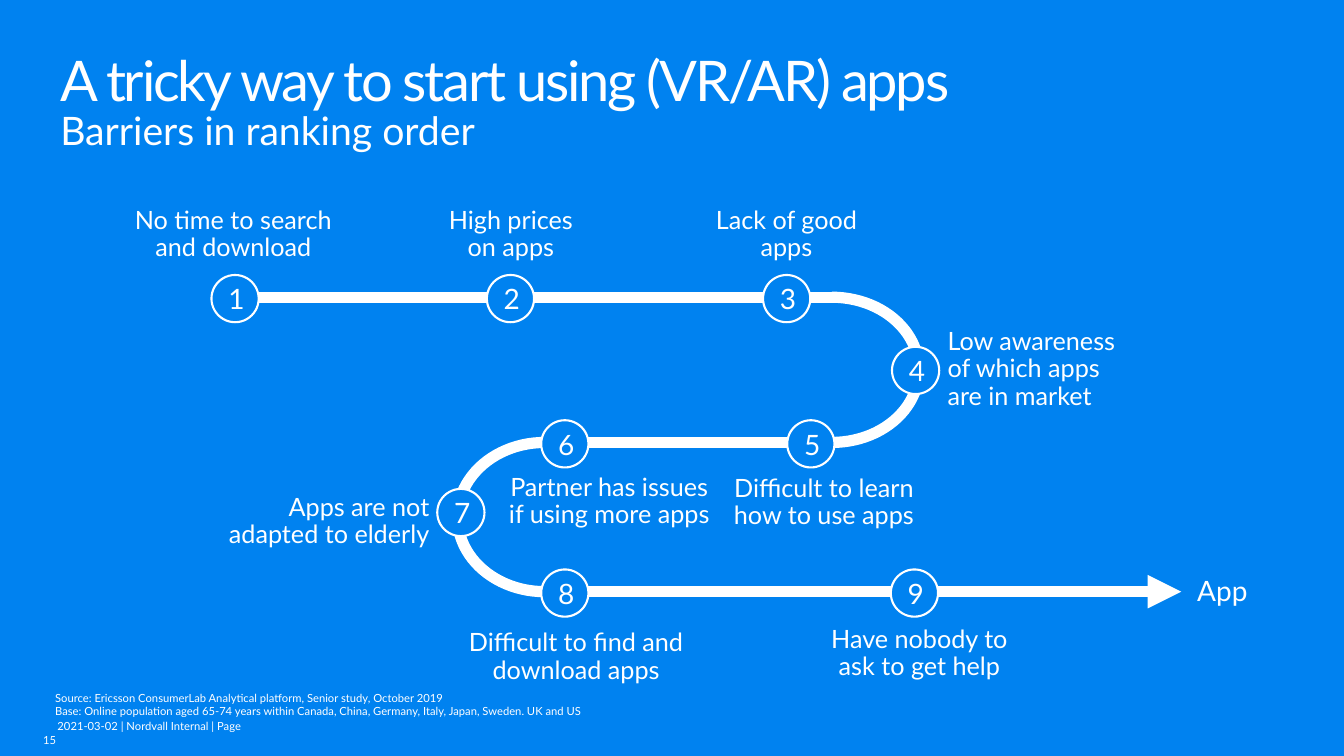
from lxml import etree
from pptx import Presentation
from pptx.dml.color import RGBColor
from pptx.enum.shapes import MSO_CONNECTOR, MSO_SHAPE
from pptx.enum.text import MSO_ANCHOR, PP_ALIGN
from pptx.oxml.ns import qn
from pptx.util import Cm, Pt

LEFT, MID, RIGHT = PP_ALIGN.LEFT, PP_ALIGN.CENTER, PP_ALIGN.RIGHT
TOP, CORE, LOW = MSO_ANCHOR.TOP, MSO_ANCHOR.MIDDLE, MSO_ANCHOR.BOTTOM
ARC, OVAL, LINE = MSO_SHAPE.ARC, MSO_SHAPE.OVAL, MSO_CONNECTOR.STRAIGHT

COLORS = {"blue": "0082F0", "white": "FFFFFF"}
FONT = "Lato"
ROAD = 8  # road width in points
DOT = 1.19  # stop diameter in cm

# Heights of the three road rows, within the route box
ROWS = (2.49, 6.15, 9.91)
# Row, start and end of each straight stretch
TRACKS = ((0, 2.94, 17.96), (1, 10.61, 17.85), (2, 10.79, 26.77))
# Upper row, left edge, start and end angle of each bend
BENDS = ((0, 15.77, 270, 90), (1, 8.53, 90, 270))
BEND_W = 4.39

# Stop position, label box, alignment, anchor, label
STOPS = (
    ((2.33, 1.93), (0.05, 0.08, 5.66, 1.57), MID, LOW, "No time to search and download"),
    ((9.27, 1.93), (7.97, 0.08, 3.81, 1.57), MID, LOW, "High prices on apps"),
    ((16.23, 1.93), (14.65, 0.08, 4.34, 1.57), MID, LOW, "Lack of good apps"),
    ((19.48, 3.74), (20.88, 3.53, 4.57, 1.57), LEFT, CORE,
     "Low awareness of which apps are in market"),
    ((16.84, 5.59), (15.44, 6.94, 4.65, 1.57), MID, TOP, "Difficult to learn how to use apps"),
    ((10.64, 5.59), (9.42, 6.91, 5.87, 1.57), MID, TOP, "Partner has issues\vif using more apps"),
    ((8.02, 7.32), (2.33, 7.42, 5.49, 1.19), RIGHT, TOP, "Apps are not adapted to elderly"),
    ((10.64, 9.35), (8.61, 10.75, 5.82, 1.63), MID, CORE, "Difficult to find and download apps"),
    ((19.45, 9.35), (17.4, 10.75, 5.54, 1.42), MID, TOP, "Have nobody to\vask to get help"),
)


def rgb(name):
    return RGBColor.from_string(COLORS[name])


def style(item, values):
    for key, value in values.items():
        setattr(item, key, value)


def ink(font, size):
    style(font, {"size": Pt(size), "name": FONT})
    font.color.rgb = rgb("white")


def stroke(line, width):
    line.color.rgb = rgb("white")
    line.width = Pt(width)


def write(slide, box, lines, size, pad=(0.2, 0.1), wrap=True, align=LEFT, anchor=TOP, lead=1.0):
    """Add a text box with one paragraph per line."""
    frame = slide.shapes.add_textbox(*map(Cm, box)).text_frame
    side, edge = map(Cm, pad)
    style(frame, {"word_wrap": wrap, "vertical_anchor": anchor, "margin_left": side,
                  "margin_right": side, "margin_top": edge, "margin_bottom": edge})
    frame.text = "\n".join(lines)
    for para in frame.paragraphs:
        style(para, {"alignment": align, "line_spacing": lead})
        for run in para.runs:
            ink(run.font, size)
    return frame


def heading(slide, box):
    frame = write(slide, box, ["A tricky way to start using (VR/AR) apps\vBarriers in ranking order"],
                  40, lead=0.85)
    main, sub = frame.paragraphs[0].runs
    main.font._element.set("spc", "-160")
    sub.font.size = Pt(28)


def track(slide, x1, x2, y, arrow):
    link = slide.shapes.add_connector(LINE, Cm(x1), Cm(y), Cm(x2), Cm(y))
    stroke(link.line, ROAD)
    if arrow:
        etree.SubElement(link.line._get_or_add_ln(), qn("a:tailEnd"), type="triangle")
    etree.SubElement(link._element.spPr, qn("a:effectLst"))


def bend(slide, x, y, height, start, end):
    curve = slide.shapes.add_shape(ARC, Cm(x), Cm(y), Cm(BEND_W), Cm(height))
    curve.shadow.inherit = False
    curve.fill.background()
    stroke(curve.line, ROAD)
    # Angles are stored in 60000ths of a degree, scaled by 100000
    curve.adjustments[0] = start * 0.6
    curve.adjustments[1] = end * 0.6


def stop(slide, x, y, num):
    disc = slide.shapes.add_shape(OVAL, Cm(x), Cm(y), Cm(DOT), Cm(DOT))
    disc.shadow.inherit = False
    disc.fill.solid()
    disc.fill.fore_color.rgb = rgb("blue")
    stroke(disc.line, 1.5)
    frame = disc.text_frame
    pad = Cm(0.25)
    style(frame, {"vertical_anchor": CORE, "margin_left": pad, "margin_right": pad,
                  "margin_top": pad, "margin_bottom": pad})
    frame.text = str(num)
    para = frame.paragraphs[0]
    para.alignment = MID
    ink(para.runs[0].font, 20)


def route(slide, left, top):
    # Road
    for row, x1, x2 in TRACKS:
        track(slide, left + x1, left + x2, top + ROWS[row], row == 2)
    for row, x, start, end in BENDS:
        bend(slide, left + x, top + ROWS[row], ROWS[row + 1] - ROWS[row], start, end)
    # Numbered stops and their labels
    for num, ((x, y), (lx, ly, w, h), align, anchor, label) in enumerate(STOPS, 1):
        stop(slide, left + x, top + y, num)
        write(slide, (left + lx, top + ly, w, h), [label], 18, pad=(0, 0.05),
              align=align, anchor=anchor, lead=0.9)
    # Goal
    write(slide, (left + 26.97, top + 9.35, 2.54, 2.54), ["App"], 20, wrap=False)


def footer(slide, left, top):
    write(slide, (left + 0.1, top, 15.29, 0.89), [
        "Source: Ericsson ConsumerLab Analytical platform, Senior study, October 2019",
        "Base: Online population aged 65-74 years within Canada, China, Germany, Italy, "
        "Japan, Sweden. UK and US"], 8)
    frame = write(slide, (left, top + 0.81, 6, 0.68),
                  ["2021-03-02 | Nordvall Internal | Page", "15"], 8, pad=(0, 0))
    frame.paragraphs[0]._p.get_or_add_pPr().set("marL", str(Cm(0.36)))


def main():
    deck = Presentation()
    style(deck, {"slide_width": Cm(33.87), "slide_height": Cm(19.05)})
    slide = deck.slides.add_slide(deck.slide_layouts[6])
    back = slide.background.fill
    back.solid()
    back.fore_color.rgb = rgb("blue")
    heading(slide, (1.32, 1.32, 23.22, 3))
    route(slide, 3, 5)
    footer(slide, 1.09, 17.32)
    deck.save("out.pptx")


if __name__ == "__main__":
    main()
